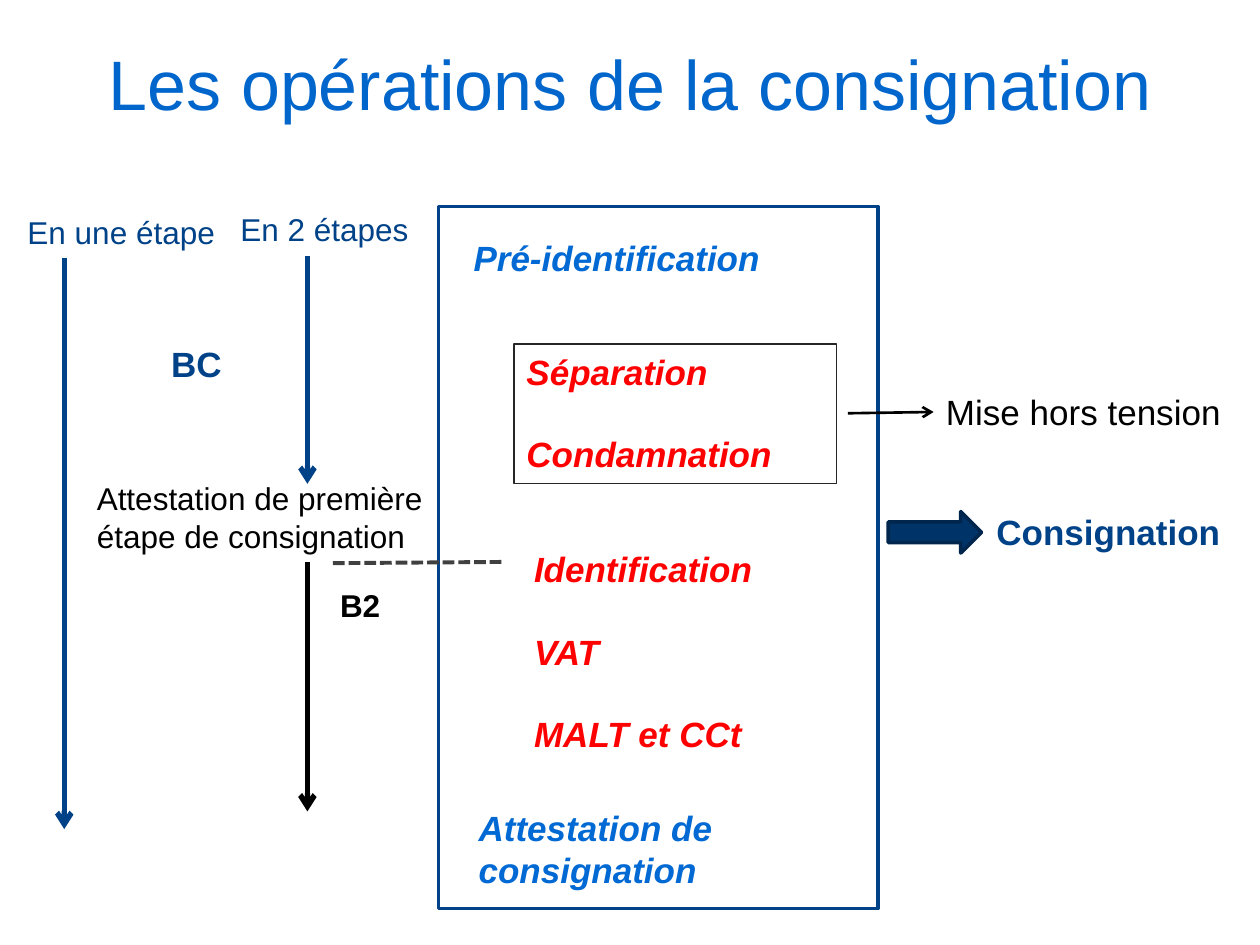
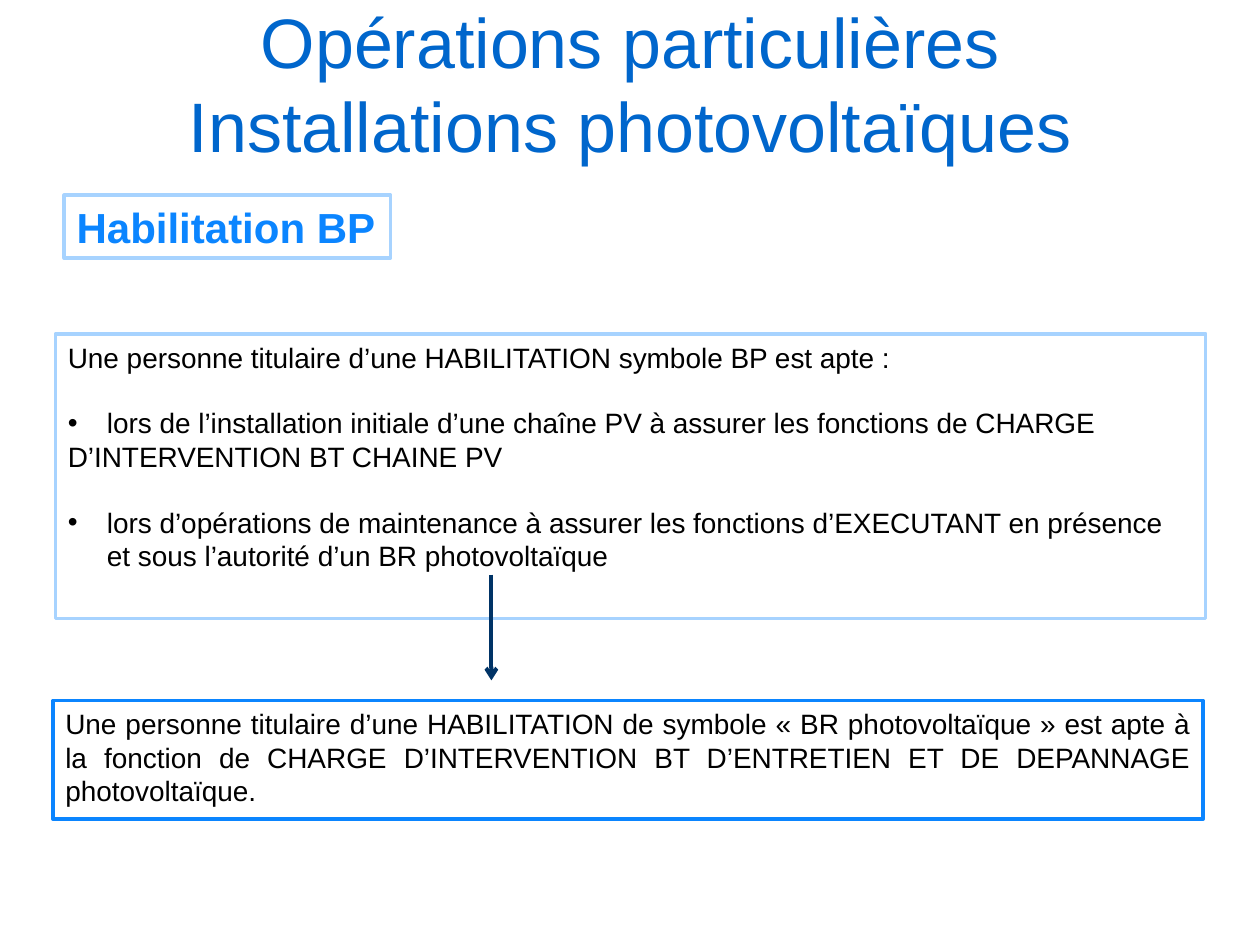
"""Build two slides on electrical lockout steps and solar work permits."""
from dataclasses import dataclass
from typing import Optional, Union

from lxml import etree
from pptx import Presentation
from pptx.dml.color import RGBColor
from pptx.enum.dml import MSO_LINE
from pptx.enum.shapes import MSO_CONNECTOR, MSO_SHAPE
from pptx.enum.text import MSO_ANCHOR, PP_ALIGN
from pptx.oxml.ns import qn
from pptx.shapes.autoshape import Shape
from pptx.slide import Slide
from pptx.text.text import _Paragraph
from pptx.util import Inches, Pt

LEFT, MID, JUST = PP_ALIGN.LEFT, PP_ALIGN.CENTER, PP_ALIGN.JUSTIFY
TOP, CORE = MSO_ANCHOR.TOP, MSO_ANCHOR.MIDDLE
RECT, BLOCK = MSO_SHAPE.RECTANGLE, MSO_SHAPE.RIGHT_ARROW
LINE, DASH = MSO_CONNECTOR.STRAIGHT, MSO_LINE.SQUARE_DOT
FACE = "Arial"
HANG = 0.31
LEFT_SITE = 1
HUES = {
    "title": "0066CC", "step": "0069D3", "alert": "FF0000", "navy": "004288",
    "black": "000000", "ink": "262626", "gray": "404040", "block": "003468",
    "rim": "00264D", "pale": "A7D3FF", "sky": "0B85FF", "deep": "003366",
    "white": "FFFFFF",
}


@dataclass(frozen=True)
class Para:
    text: str
    gap: float = 0
    align: PP_ALIGN = LEFT
    bullet: bool = False


@dataclass(frozen=True)
class Box:
    at: tuple[float, float, float, float]
    paras: tuple[Para, ...] = ()
    size: int = 20
    hue: str = "black"
    bold: bool = False
    slant: bool = False
    wrap: bool = False
    anchor: MSO_ANCHOR = TOP
    edge: str = ""
    width: float = 2
    fill: str = ""
    form: MSO_SHAPE = RECT


@dataclass(frozen=True)
class Link:
    start: tuple[float, float]
    end: tuple[float, float]
    hue: str
    width: float
    dashed: bool = False
    goal: Optional[Box] = None


Item = Union[Box, Link]


def color(hue: str) -> RGBColor:
    return RGBColor.from_string(HUES[hue])


def add_dot(para: _Paragraph) -> None:
    props = para._p.get_or_add_pPr()
    props.set("marL", str(Inches(HANG)))
    props.set("indent", str(-Inches(HANG)))
    etree.SubElement(props, qn("a:buFont")).set("typeface", FACE)
    etree.SubElement(props, qn("a:buChar")).set("char", "•")


def write(shape: Shape, box: Box) -> None:
    frame = shape.text_frame
    frame.word_wrap = box.wrap
    frame.vertical_anchor = box.anchor
    look = {"name": FACE, "size": Pt(box.size), "bold": box.bold, "italic": box.slant}
    for rank, item in enumerate(box.paras):
        para = frame.add_paragraph() if rank else frame.paragraphs[0]
        para.text = item.text
        para.alignment = item.align
        if item.gap:
            para.space_before = Pt(item.gap)
        if item.bullet:
            add_dot(para)
        for run in para.runs:
            for key, value in look.items():
                setattr(run.font, key, value)
            run.font.color.rgb = color(box.hue)


def draw_box(slide: Slide, box: Box) -> Shape:
    place = [Inches(side) for side in box.at]
    if box.edge:
        shape = slide.shapes.add_shape(box.form, *place)
        shape.shadow.inherit = False
        shape.line.color.rgb = color(box.edge)
        shape.line.width = Pt(box.width)
        if box.fill:
            shape.fill.solid()
            shape.fill.fore_color.rgb = color(box.fill)
        else:
            shape.fill.background()
    else:
        shape = slide.shapes.add_textbox(*place)
    if box.paras:
        write(shape, box)
    return shape


def draw_link(slide: Slide, link: Link, drawn: dict[Box, Shape]) -> None:
    ends = [Inches(side) for side in link.start + link.end]
    wire = slide.shapes.add_connector(LINE, *ends)
    if link.goal:
        wire.end_connect(drawn[link.goal], LEFT_SITE)
    wire.line.color.rgb = color(link.hue)
    wire.line.width = Pt(link.width)
    if link.dashed:
        wire.line.dash_style = DASH
    else:
        stroke = wire.line._get_or_add_ln()
        etree.SubElement(stroke, qn("a:tailEnd")).set("type", "arrow")
    etree.SubElement(wire._element.spPr, qn("a:effectLst"))


def draw(slide: Slide, title: str, items: list[Item]) -> None:
    head = Box((0.5, 0.08, 9, 1.15), (Para(title, align=MID),), 40, "title",
               wrap=True, anchor=CORE)
    drawn: dict[Box, Shape] = {}
    for item in [head, *items]:
        if isinstance(item, Box):
            drawn[item] = draw_box(slide, item)
        else:
            draw_link(slide, item, drawn)


def stack(*texts: str, gap: float = 0) -> tuple[Para, ...]:
    return tuple(Para(text, gap if rank else 0) for rank, text in enumerate(texts))


def lockout() -> list[Item]:
    step = {"hue": "step", "bold": True, "slant": True}
    alert = {"hue": "alert", "bold": True, "slant": True, "wrap": True}
    off = Box((7.41, 3.05, 2.4, 0.44), stack("Mise hors tension"))
    return [
        Box((3.66, 1.83, 2.49, 0.44), stack("Pré-identification"), **step),
        Box((3.7, 6.35, 2.15, 0.77), stack("Attestation de", "consignation"), **step),
        Box((4.08, 2.73, 2.56, 1.11), stack("Séparation", "Condamnation", gap=23),
            edge="ink", width=0.75, **alert),
        off,
        Box((7.81, 4, 2, 0.44), stack("Consignation"), hue="navy", bold=True),
        Box((4.14, 4.3, 2.5, 1.83),
            stack("Identification", "VAT", "MALT et CCt", gap=23), **alert),
        Box((3.48, 1.64, 3.49, 5.57), edge="navy"),
        Link((6.73, 3.28), (7.41, 3.27), "black", 1.5, goal=off),
        Box((7.05, 4.06, 0.74, 0.33), edge="rim", fill="block", form=BLOCK),
        Box((0.12, 1.64, 1.7, 0.4), stack("En une étape"), 18, "navy"),
        Link((0.51, 2.05), (0.51, 6.58), "navy", 3),
        Box((1.81, 1.62, 1.55, 0.4), stack("En 2 étapes"), 18, "navy"),
        Link((2.44, 2.03), (2.44, 3.84), "navy", 3),
        Link((2.44, 4.46), (2.44, 6.44), "black", 3),
        Box((1.26, 2.67, 0.61, 0.44), stack("BC"), hue="navy", bold=True),
        Box((2.6, 4.6, 0.52, 0.4), stack("B2"), 18, bold=True),
        Link((3.98, 4.46), (2.62, 4.47), "gray", 2.25, dashed=True),
        Box((0.67, 3.75, 5, 0.71),
            stack("Attestation de première", "étape de consignation"), 18, wrap=True),
    ]


def solar() -> list[Item]:
    body = {"size": 16, "wrap": True, "fill": "white"}
    duties = (
        Para("Une personne titulaire d’une HABILITATION symbole BP est apte :"),
        Para("lors de l’installation initiale d’une chaîne PV à assurer les "
             "fonctions de CHARGE", 18.4, JUST, True),
        Para("D’INTERVENTION BT CHAINE PV"),
        Para("lors d’opérations de maintenance à assurer les fonctions d’EXECUTANT "
             "en présence et sous l’autorité d’un BR photovoltaïque", 18.4, LEFT, True),
    )
    role = Para("Une personne titulaire d’une HABILITATION de symbole « BR "
                "photovoltaïque » est apte à la fonction de CHARGE D’INTERVENTION BT "
                "D’ENTRETIEN ET DE DEPANNAGE photovoltaïque.", align=JUST)
    return [
        Box((0.51, 1.55, 2.59, 0.5), stack("Habilitation BP"), 24, "sky", True,
            edge="pale", fill="white"),
        Box((0.44, 2.65, 9.13, 2.26), duties, edge="pale", **body),
        Box((0.42, 5.56, 9.13, 0.94), (role,), edge="sky", **body),
        Link((3.9, 4.56), (3.9, 5.4), "deep", 2.25),
    ]


def main() -> None:
    deck = Presentation()
    deck.slide_width, deck.slide_height = Inches(10), Inches(7.5)
    pages = {
        "Les opérations de la consignation": lockout(),
        "Opérations particulières\vInstallations photovoltaïques": solar(),
    }
    for title, items in pages.items():
        draw(deck.slides.add_slide(deck.slide_layouts[6]), title, items)
    deck.save("out.pptx")


if __name__ == "__main__":
    main()
